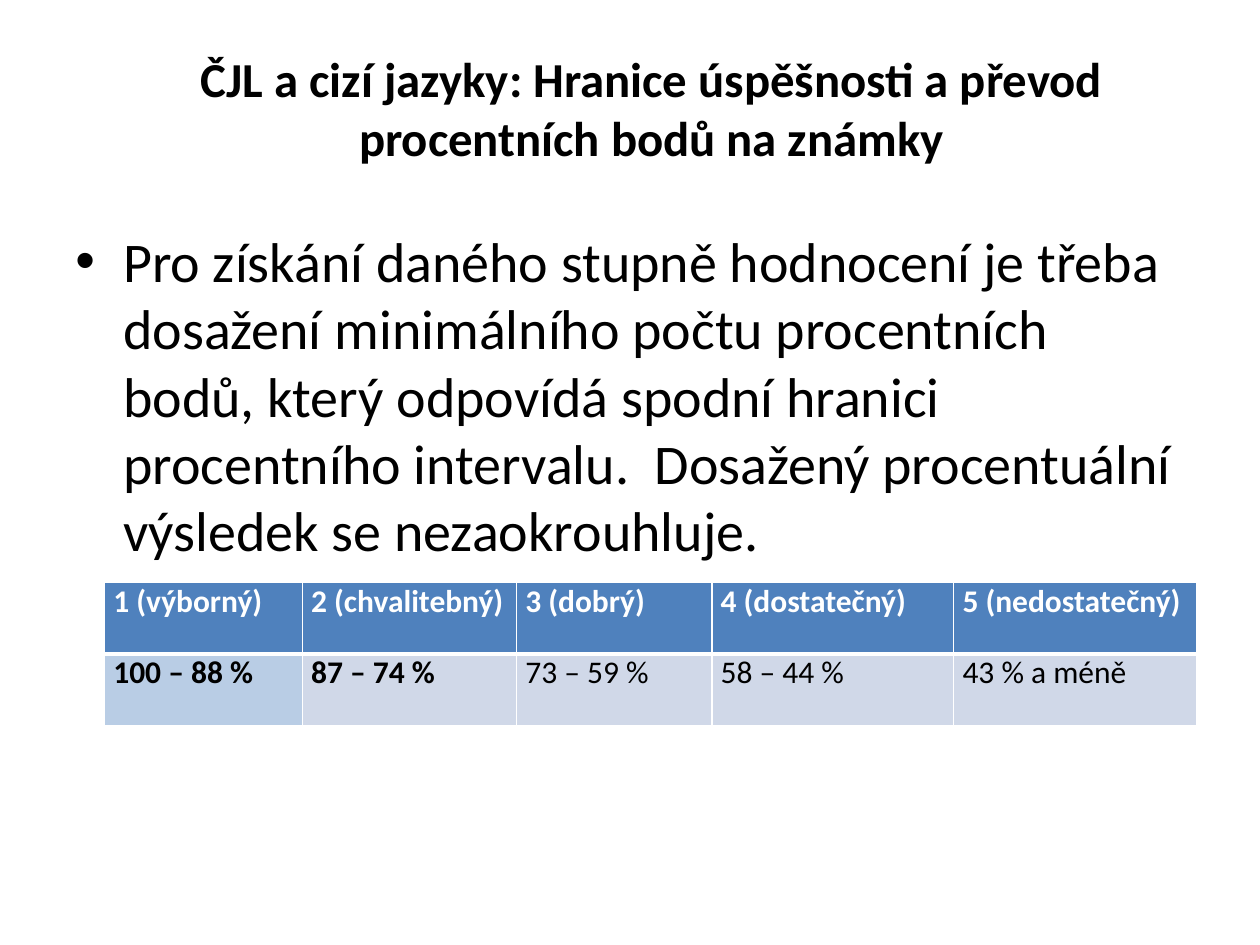
from lxml import etree
from pptx import Presentation
from pptx import util as u
from pptx.dml.color import RGBColor
from pptx.enum import text
from pptx.oxml.ns import qn

# Content
TITLE = "ČJL a cizí jazyky: Hranice úspěšnosti a převod procentních bodů na známky"
BODY = ("Pro získání daného stupně hodnocení je třeba dosažení minimálního počtu "
        "procentních bodů, který odpovídá spodní hranici procentního intervalu.  "
        "Dosažený procentuální výsledek se nezaokrouhluje.")
GRADES = [
    ("1 (výborný)", "100 – 88 %"),
    ("2 (chvalitebný)", "87 – 74 %"),
    ("3 (dobrý)", "73 – 59 %"),
    ("4 (dostatečný)", "58 – 44 %"),
    ("5 (nedostatečný)", "43 % a méně"),
]
BOLD_RANGES = 2  # leading grades whose range is bold

THEME = dict(font="Calibri", ink="000000", paper="FFFFFF", header="4F81BD",
             first="B9CDE5", band="D0D8E8", title=27.9, body=32, cell=18)

# Layout in inches
WIDTH, HEIGHT = 10, 7.5
TITLE_BOX = (0.67, 0.23, 9, 1.25)
BODY_BOX = (0.5, 1.75, 9, 4.95)
TABLE_AT = (0.83, 4.62)
COLUMNS = [1.57, 1.7, 1.55, 1.92, 1.93]
ROW = 0.57
INDENT = 0.38
CELL_PAD = 0.07


def style(p, size, color, bold=False):
    for r in p.runs:
        r.font.name, r.font.size, r.font.bold = THEME["font"], u.Pt(size), bold
        r.font.color.rgb = RGBColor.from_string(color)


def add_text(slide, box, words, size, anchor, bold=False):
    sp = slide.shapes.add_textbox(*map(u.Inches, box))
    tf = sp.text_frame
    tf.word_wrap, tf.vertical_anchor = True, anchor
    p = tf.paragraphs[0]
    p.text = words
    style(p, size, THEME["ink"], bold)
    return p


def add_bullet(p):
    pPr = p._p.get_or_add_pPr()
    pPr.set("marL", str(u.Inches(INDENT)))
    pPr.set("indent", str(-u.Inches(INDENT)))
    etree.SubElement(pPr, qn("a:buFont"), typeface="Arial")
    etree.SubElement(pPr, qn("a:buChar"), char="•")


def add_border(cell, side, points):
    ln = etree.SubElement(cell._tc.get_or_add_tcPr(), qn(f"a:ln{side}"),
                          w=str(u.Pt(points)))
    fill = etree.SubElement(ln, qn("a:solidFill"))
    etree.SubElement(fill, qn("a:srgbClr"), val=THEME["paper"])


def fill_cell(cell, words, fill, color, bold, top, bottom):
    cell.margin_left = cell.margin_right = u.Inches(CELL_PAD)
    cell.margin_top = cell.margin_bottom = 0
    for side, points in (("L", 1), ("R", 1), ("T", top), ("B", bottom)):
        add_border(cell, side, points)
    cell.fill.solid()
    cell.fill.fore_color.rgb = RGBColor.from_string(fill)
    p = cell.text_frame.paragraphs[0]
    p.text = words
    p.alignment = text.PP_ALIGN.JUSTIFY
    style(p, THEME["cell"], color, bold)


def add_grades(slide):
    size = (sum(COLUMNS), 2 * ROW)
    table = slide.shapes.add_table(2, len(GRADES),
                                   *map(u.Inches, TABLE_AT + size)).table
    for row in table.rows:
        row.height = u.Inches(ROW)
    for i, (grade, interval) in enumerate(GRADES):
        table.columns[i].width = u.Inches(COLUMNS[i])
        fill_cell(table.cell(0, i), grade, THEME["header"], THEME["paper"],
                  True, 1, 3)
        fill_cell(table.cell(1, i), interval, THEME["band" if i else "first"],
                  THEME["ink"], i < BOLD_RANGES, 3, 1)


def main():
    prs = Presentation()
    prs.slide_width, prs.slide_height = u.Inches(WIDTH), u.Inches(HEIGHT)
    slide = prs.slides.add_slide(prs.slide_layouts[6])

    # Heading
    p = add_text(slide, TITLE_BOX, TITLE, THEME["title"],
                 text.MSO_ANCHOR.MIDDLE, bold=True)
    p.alignment = text.PP_ALIGN.CENTER

    # Explanation
    add_bullet(add_text(slide, BODY_BOX, BODY, THEME["body"],
                        text.MSO_ANCHOR.TOP))

    # Grade table
    add_grades(slide)
    prs.save("out.pptx")


if __name__ == "__main__":
    main()
